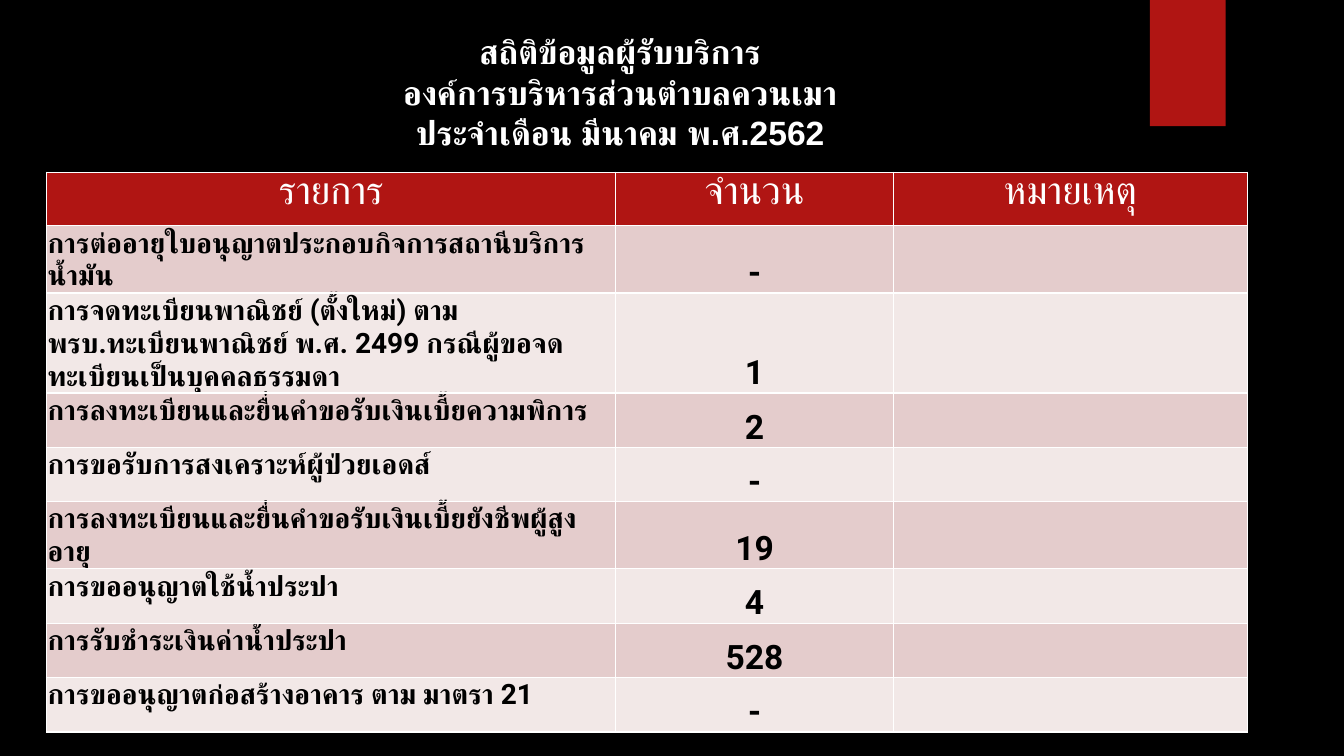
from dataclasses import dataclass

from lxml import etree
from pptx import Presentation
from pptx.dml.color import RGBColor
from pptx.enum.shapes import MSO_SHAPE
from pptx.enum.text import MSO_ANCHOR, MSO_AUTO_SIZE, PP_ALIGN
from pptx.oxml.ns import qn
from pptx.util import Cm, Pt

RECTANGLE = MSO_SHAPE.RECTANGLE
TOP, BOTTOM = MSO_ANCHOR.TOP, MSO_ANCHOR.BOTTOM
LEFT, CENTER = PP_ALIGN.LEFT, PP_ALIGN.CENTER
NO_AUTOFIT = MSO_AUTO_SIZE.NONE
TITLE_ONLY_LAYOUT = 5


@dataclass(frozen=True)
class Theme:
    background: str = "000000"
    accent: str = "B01513"
    light: str = "FFFFFF"
    dark: str = "000000"
    bands: tuple = ("E4CCCC", "F2E8E7")
    title_font: str = "Arial"
    header_font: str = "League Spartan"
    body_font: str = "Roboto"
    title_size: int = 24
    header_size: int = 28
    service_size: int = 20
    count_size: int = 24
    border_width: int = 1


THEME = Theme()

TITLE_LINES = (
    "สถิติข้อมูลผู้รับบริการ",
    "องค์การบริหารส่วนตำบลควนเมา",
    "ประจำเดือน มีนาคม พ.ศ.2562",
)
HEADERS = ("รายการ", "จำนวน", "หมายเหตุ")
SERVICES = (
    ("การต่ออายุใบอนุญาตประกอบกิจการสถานีบริการน้ำมัน", "-"),
    ("การจดทะเบียนพาณิชย์ (ตั้งใหม่) ตาม พรบ.ทะเบียนพาณิชย์ พ.ศ. 2499 "
     "กรณีผู้ขอจดทะเบียนเป็นบุคคลธรรมดา", "1"),
    ("การลงทะเบียนและยื่นคำขอรับเงินเบี้ยความพิการ", "2"),
    ("การขอรับการสงเคราะห์ผู้ป่วยเอดส์", "-"),
    ("การลงทะเบียนและยื่นคำขอรับเงินเบี้ยยังชีพผู้สูงอายุ", "19"),
    ("การขออนุญาตใช้น้ำประปา", "4"),
    ("การรับชำระเงินค่าน้ำประปา", "528"),
    ("การขออนุญาตก่อสร้างอาคาร ตาม มาตรา 21", "-"),
)
COLUMN_WIDTHS = (14.35, 6.99, 8.92)
HEADER_HEIGHT, FIRST_SERVICE_HEIGHT, SERVICE_HEIGHT = 1.35, 1.6, 1.37
TIGHT_MARGINS = {"margin_left": Cm(0.03), "margin_right": Cm(0.03),
                 "margin_top": Cm(0.03), "margin_bottom": 0}


def set_all(target, formats):
    for attribute, value in formats.items():
        setattr(target, attribute, value)


def paint(fill, color):
    fill.solid()
    fill.fore_color.rgb = RGBColor.from_string(color)


def write(text_frame, text, align, font, size, color, bold):
    """Fill a frame, giving Latin and Thai script the same typeface."""
    text_frame.text = text
    for paragraph in text_frame.paragraphs:
        paragraph.alignment = align
        for run in paragraph.runs:
            set_all(run.font, {"name": font, "size": Pt(size), "bold": bold})
            run.font.color.rgb = RGBColor.from_string(color)
            thai = etree.SubElement(run.font._element, qn("a:cs"))
            thai.set("typeface", font)


def add_cell_borders(cell):
    properties = cell._tc.get_or_add_tcPr()
    for position, side in enumerate(("lnL", "lnR", "lnT", "lnB")):
        line = etree.Element(qn(f"a:{side}"), w=str(Pt(THEME.border_width)))
        solid = etree.SubElement(line, qn("a:solidFill"))
        etree.SubElement(solid, qn("a:srgbClr"), val=THEME.light)
        properties.insert(position, line)


def add_title(slide):
    title = slide.shapes.title
    set_all(title, {"left": Cm(6.93), "top": Cm(0.66),
                    "width": Cm(17.4), "height": Cm(3.33)})
    set_all(title.text_frame, {"word_wrap": True, "vertical_anchor": TOP,
                               "auto_size": NO_AUTOFIT})
    write(title.text_frame, "\n".join(TITLE_LINES), CENTER, THEME.title_font,
          THEME.title_size, THEME.light, True)


def add_ribbon(slide):
    ribbon = slide.shapes.add_shape(RECTANGLE, Cm(28.98), 0, Cm(1.91), Cm(3.18))
    ribbon.shadow.inherit = False
    paint(ribbon.fill, THEME.accent)
    ribbon.line.fill.background()


def fill_header(table):
    for column, header in enumerate(HEADERS):
        cell = table.cell(0, column)
        paint(cell.fill, THEME.accent)
        write(cell.text_frame, header, CENTER, THEME.header_font,
              THEME.header_size, THEME.light, False)


def fill_service(table, row, service, count):
    for column in range(len(HEADERS)):
        paint(table.cell(row, column).fill,
              THEME.bands[(row - 1) % len(THEME.bands)])
    entries = ((service, LEFT, TOP, THEME.service_size),
               (count, CENTER, BOTTOM, THEME.count_size))
    for column, (text, align, anchor, size) in enumerate(entries):
        cell = table.cell(row, column)
        set_all(cell, {**TIGHT_MARGINS, "vertical_anchor": anchor})
        write(cell.text_frame, text, align, THEME.body_font, size,
              THEME.dark, True)


def add_service_table(slide):
    heights = [HEADER_HEIGHT, FIRST_SERVICE_HEIGHT]
    heights += [SERVICE_HEIGHT] * (len(SERVICES) - 1)
    table = slide.shapes.add_table(
        len(heights), len(HEADERS), Cm(1.17), Cm(4.34),
        Cm(sum(COLUMN_WIDTHS)), Cm(sum(heights))).table
    for column, width in zip(table.columns, COLUMN_WIDTHS):
        column.width = Cm(width)
    for row, height in zip(table.rows, heights):
        row.height = Cm(height)
    fill_header(table)
    for row, (service, count) in enumerate(SERVICES, start=1):
        fill_service(table, row, service, count)
    for cell in table.iter_cells():
        add_cell_borders(cell)


def main():
    presentation = Presentation()
    set_all(presentation, {"slide_width": Cm(33.87), "slide_height": Cm(19.05)})
    layout = presentation.slide_layouts[TITLE_ONLY_LAYOUT]
    slide = presentation.slides.add_slide(layout)
    paint(slide.background.fill, THEME.background)
    add_ribbon(slide)
    add_title(slide)
    add_service_table(slide)
    presentation.save("out.pptx")


if __name__ == "__main__":
    main()
